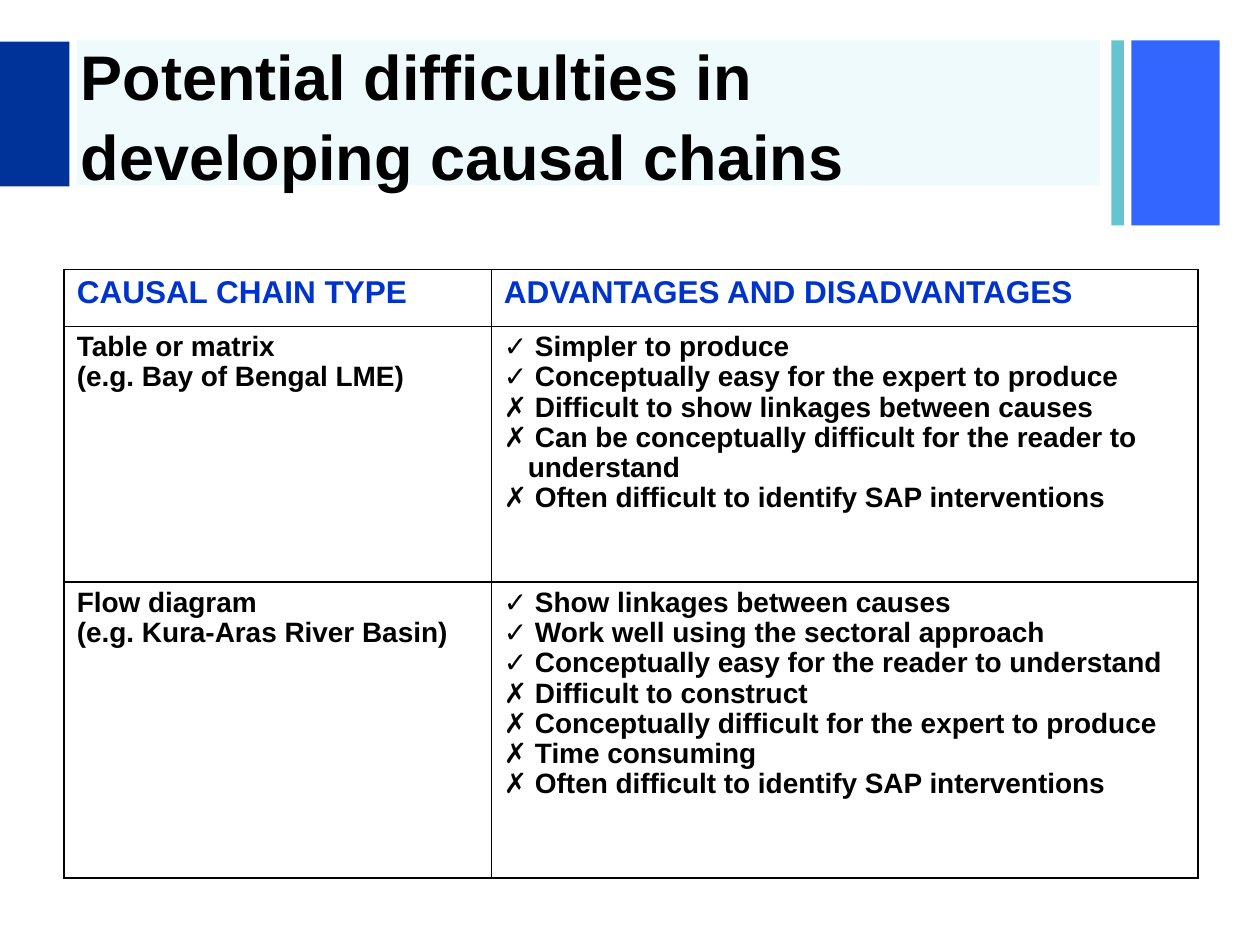
from lxml import etree
from pptx import Presentation
from pptx.dml.color import RGBColor
from pptx.enum.shapes import MSO_SHAPE
from pptx.enum.text import MSO_ANCHOR, PP_ALIGN
from pptx.oxml.ns import qn
from pptx.util import Inches, Pt

RECT = MSO_SHAPE.RECTANGLE
LEFT = PP_ALIGN.LEFT
TOP, MIDDLE = MSO_ANCHOR.TOP, MSO_ANCHOR.MIDDLE
BLACK = RGBColor(0x00, 0x00, 0x00)
BLUE = RGBColor(0x33, 0x66, 0xFF)
TEAL = RGBColor(0x65, 0xC4, 0xD2)
CYAN = RGBColor(0x14, 0xC5, 0xD0)
NAVY = RGBColor(0x00, 0x33, 0x99)
HEAD = RGBColor(0x00, 0x33, 0xCC)


def set_font(par, size, color):
    par.alignment = LEFT
    par.font.name = "Arial"
    par.font.size = Pt(size)
    par.font.bold = True
    par.font.color.rgb = color


def add_borders(cell):
    props = cell._tc.get_or_add_tcPr()
    for n, side in enumerate(("a:lnL", "a:lnR", "a:lnT", "a:lnB")):
        line = etree.Element(qn(side), w=str(Pt(1)))
        fill = etree.SubElement(line, qn("a:solidFill"))
        etree.SubElement(fill, qn("a:srgbClr"), val=str(BLACK))
        props.insert(n, line)


prs = Presentation()
prs.slide_width, prs.slide_height = Inches(10), Inches(7.5)
slide = prs.slides.add_slide(prs.slide_layouts[5])
title = slide.shapes.title

# Header bars, drawn behind the title
bars = [
    (8.98, 0.32, 0.7, 1.47, BLUE, 100),
    (8.82, 0.32, 0.1, 1.47, TEAL, 100),
    (0.61, 0.32, 8.12, 1.15, CYAN, 7),
    (0, 0.33, 0.55, 1.15, NAVY, 100),
]
for x, y, w, h, color, alpha in bars:
    bar = slide.shapes.add_shape(RECT, Inches(x), Inches(y), Inches(w), Inches(h))
    bar.shadow.inherit = False
    bar.fill.solid()
    bar.fill.fore_color.rgb = color
    bar.line.fill.background()
    if alpha < 100:
        tint = bar._element.spPr.find(".//" + qn("a:srgbClr"))
        etree.SubElement(tint, qn("a:alpha"), val=str(alpha * 1000))
    title._element.addprevious(bar._element)

# Title
title.left, title.top = Inches(0.54), Inches(0.34)
title.width, title.height = Inches(8.27), Inches(1.12)
frame = title.text_frame
frame.text = "Potential difficulties in developing causal chains"
frame.word_wrap = True
frame.vertical_anchor = MIDDLE
set_font(frame.paragraphs[0], 36, BLACK)
frame.paragraphs[0].line_spacing = 1.06

# Table of chain types
rows = [
    (["CAUSAL CHAIN TYPE"], ["ADVANTAGES AND DISADVANTAGES"]),
    (
        ["Table or matrix", "(e.g. Bay of Bengal LME)"],
        [
            "✓ Simpler to produce",
            "✓ Conceptually easy for the expert to produce",
            "✗ Difficult to show linkages between causes",
            "✗ Can be conceptually difficult for the reader to understand",
            "✗ Often difficult to identify SAP interventions",
        ],
    ),
    (
        ["Flow diagram", "(e.g. Kura-Aras River Basin)"],
        [
            "✓ Show linkages between causes",
            "✓ Work well using the sectoral approach",
            "✓ Conceptually easy for the reader to understand",
            "✗ Difficult to construct",
            "✗ Conceptually difficult for the expert to produce",
            "✗ Time consuming",
            "✗ Often difficult to identify SAP interventions",
        ],
    ),
]
table = slide.shapes.add_table(
    3, 2, Inches(0.51), Inches(2.14), Inches(9), Inches(4.83)
).table
table.first_row = table.horz_banding = False
for col, width in zip(table.columns, (3.39, 5.61)):
    col.width = Inches(width)
for row, height in zip(table.rows, (0.45, 2.03, 2.35)):
    row.height = Inches(height)

for r, row in enumerate(rows):
    size, color = (18, HEAD) if r == 0 else (16, BLACK)
    for c, lines in enumerate(row):
        cell = table.cell(r, c)
        cell.fill.background()
        cell.vertical_anchor = TOP
        add_borders(cell)
        cell.text = "\n".join(lines)
        for par in cell.text_frame.paragraphs:
            # Hanging indent for lines that wrap
            props = par._p.get_or_add_pPr()
            props.set("marL", str(Inches(0.19)))
            props.set("indent", str(Inches(-0.19)))
            par.line_spacing = 0.97
            set_font(par, size, color)

prs.save("out.pptx")
